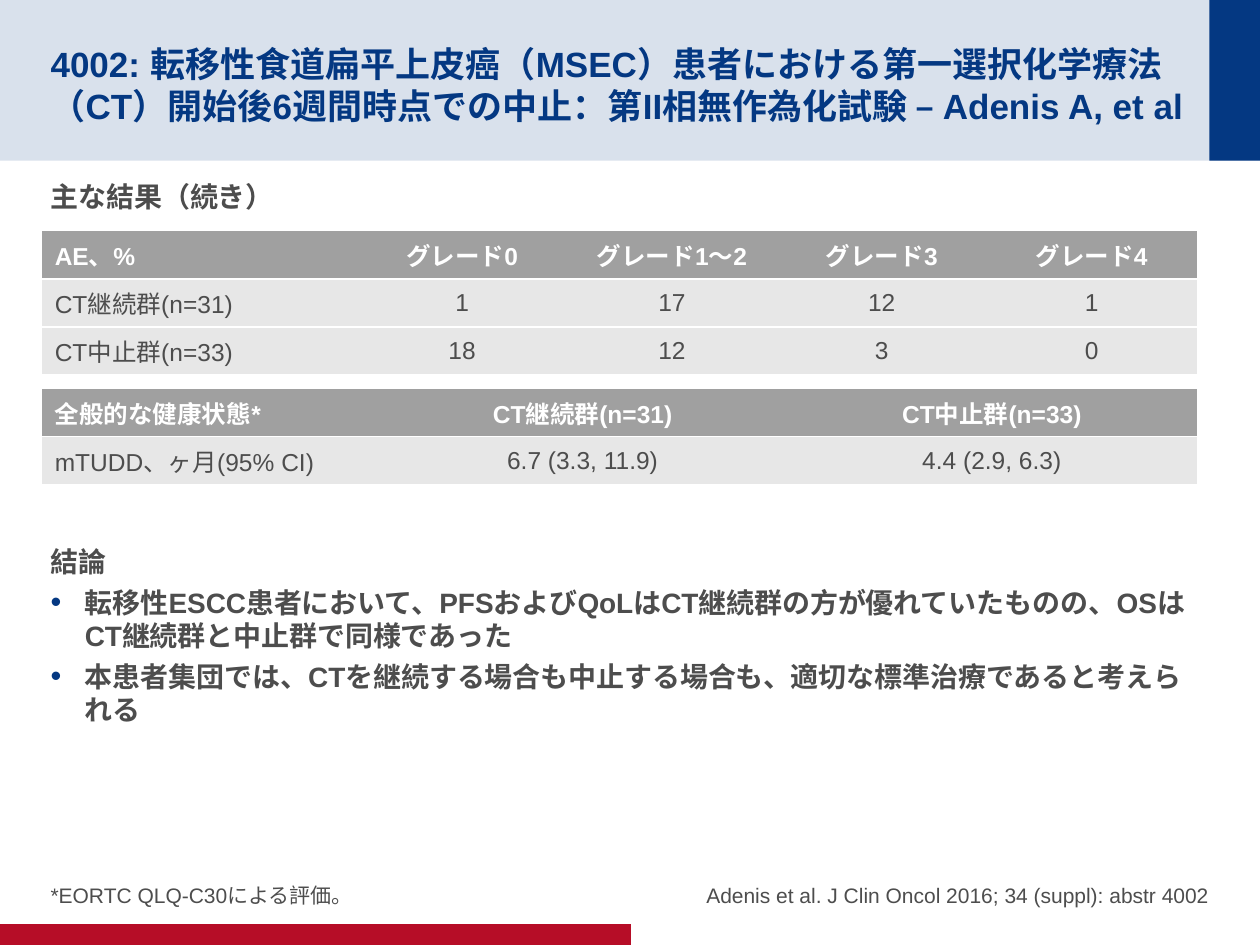
import pptx
import pptx.dml.color
import pptx.enum.shapes
import pptx.enum.text
import pptx.oxml
import pptx.oxml.ns
import pptx.util
from pptx.util import Cm

RGBColor = pptx.dml.color.RGBColor
Align = pptx.enum.text.PP_ALIGN
Anchor = pptx.enum.text.MSO_ANCHOR

NAVY = RGBColor(0x04, 0x38, 0x82)
PALE_BLUE = RGBColor(0xD9, 0xE1, 0xEC)
RED = RGBColor(0xB6, 0x0D, 0x27)
TEXT_GREY = RGBColor(0x4D, 0x4D, 0x4D)
HEADER_GREY = RGBColor(0xA0, 0xA0, 0xA0)
ROW_GREY = RGBColor(0xE7, 0xE7, 0xE7)
WHITE = RGBColor(0xFF, 0xFF, 0xFF)

NAMESPACE = pptx.oxml.ns.nsdecls("a")
NO_STYLE_TABLE = "{2D5ABB26-0587-4C30-8999-92F81FD0307C}"
LEFT = Cm(1.02)
ROW_HEIGHT = Cm(0.97)


def write(paragraph, text, size=16, color=TEXT_GREY, bold=False,
          align=Align.LEFT, before=0, after=4, bullet=False):
    """Put formatted text into a paragraph."""
    paragraph.alignment = align
    paragraph.space_before = pptx.util.Pt(before)
    paragraph.space_after = pptx.util.Pt(after)
    run = paragraph.add_run()
    run.text = text
    run.font.name = "Arial"
    run.font.size = pptx.util.Pt(size)
    run.font.bold = bold
    run.font.color.rgb = color
    if bullet:
        add_bullet(paragraph)


def add_bullet(paragraph):
    properties = paragraph._p.get_or_add_pPr()
    properties.set("marL", str(Cm(0.69)))
    properties.set("indent", str(-Cm(0.69)))
    for xml in (
        f'<a:buClr {NAMESPACE}><a:srgbClr val="{NAVY}"/></a:buClr>',
        f'<a:buSzPct {NAMESPACE} val="110000"/>',
        f'<a:buFont {NAMESPACE} typeface="Arial"/>',
        f'<a:buChar {NAMESPACE} char="•"/>',
    ):
        properties.append(pptx.oxml.parse_xml(xml))


def add_bar(slide, left, top, width, height, color):
    shape = slide.shapes.add_shape(
        pptx.enum.shapes.MSO_SHAPE.RECTANGLE, left, top, width, height)
    shape.shadow.inherit = False
    shape.fill.solid()
    shape.fill.fore_color.rgb = color
    shape.line.fill.background()


def add_text(slide, left, top, width, height, paragraphs,
             anchor=Anchor.TOP, inset_top=0, **text_format):
    """Add a text box; each paragraph is a text and its own format."""
    frame = slide.shapes.add_textbox(left, top, width, height).text_frame
    frame.word_wrap = True
    frame.vertical_anchor = anchor
    frame.margin_left = frame.margin_right = frame.margin_bottom = 0
    frame.margin_top = inset_top
    for index, (text, own_format) in enumerate(paragraphs):
        paragraph = frame.add_paragraph() if index else frame.paragraphs[0]
        write(paragraph, text, **{**text_format, **own_format})


def add_rules(cell):
    """Draw white lines above and below a cell."""
    properties = cell._tc.get_or_add_tcPr()
    for side in ("lnT", "lnB"):
        properties.append(pptx.oxml.parse_xml(
            f'<a:{side} {NAMESPACE} w="12700"><a:solidFill>'
            f'<a:srgbClr val="{WHITE}"/></a:solidFill></a:{side}>'))


def add_grid(slide, top, widths, rows):
    """Add a table with a dark header row and a left-aligned first column."""
    table = slide.shapes.add_table(
        len(rows), len(widths), Cm(0.85), top,
        sum(widths), ROW_HEIGHT * len(rows)).table
    table.horz_banding = False
    style = table._tbl.tblPr.find(pptx.oxml.ns.qn("a:tableStyleId"))
    style.text = NO_STYLE_TABLE
    for column, width in zip(table.columns, widths):
        column.width = width
    for row_index, row in enumerate(rows):
        header = row_index == 0
        table.rows[row_index].height = ROW_HEIGHT
        for column_index, text in enumerate(row):
            cell = table.cell(row_index, column_index)
            add_rules(cell)
            cell.fill.solid()
            cell.fill.fore_color.rgb = HEADER_GREY if header else ROW_GREY
            cell.vertical_anchor = Anchor.MIDDLE
            write(cell.text_frame.paragraphs[0], text, size=14, bold=header,
                  color=WHITE if header else TEXT_GREY, before=2.8, after=0,
                  align=Align.CENTER if column_index else Align.LEFT)


def main():
    presentation = pptx.Presentation()
    presentation.slide_width = Cm(25.4)
    presentation.slide_height = Cm(19.05)
    slide = presentation.slides.add_slide(presentation.slide_layouts[6])

    # Title band and footer bar
    add_bar(slide, 0, 0, Cm(25.4), Cm(3.24), PALE_BLUE)
    add_bar(slide, Cm(24.38), 0, Cm(1.02), Cm(3.24), NAVY)
    add_bar(slide, 0, Cm(18.63), Cm(12.72), Cm(0.42), RED)

    # Title
    title = ("4002: 転移性食道扁平上皮癌（MSEC）患者における第一選択化学療法（CT）"
             "開始後6週間時点での中止：第II相無作為化試験 – Adenis A, et al")
    add_text(slide, LEFT, Cm(0.51), Cm(22.89), Cm(2.24), [(title, {})],
             anchor=Anchor.MIDDLE, inset_top=Cm(0.13),
             size=20, color=NAVY, bold=True, after=0)

    # Results heading and tables
    add_text(slide, LEFT, Cm(3.48), Cm(23.37), Cm(1),
             [("主な結果（続き）", {})], inset_top=Cm(0.13), bold=True)
    add_grid(slide, Cm(4.65), [Cm(6.35)] + [Cm(4.23)] * 4, [
        ("AE、%", "グレード0", "グレード1～2", "グレード3", "グレード4"),
        ("CT継続群(n=31)", "1", "17", "12", "1"),
        ("CT中止群(n=33)", "18", "12", "3", "0"),
    ])
    add_grid(slide, Cm(7.83), [Cm(6.77), Cm(8.25), Cm(8.25)], [
        ("全般的な健康状態*", "CT継続群(n=31)", "CT中止群(n=33)"),
        ("mTUDD、ヶ月(95% CI)", "6.7 (3.3, 11.9)", "4.4 (2.9, 6.3)"),
    ])

    # Conclusions
    add_text(slide, LEFT, Cm(10.85), Cm(23.37), Cm(4), [
        ("結論", {}),
        ("転移性ESCC患者において、PFSおよびQoLはCT継続群の方が優れていたものの、"
         "OSはCT継続群と中止群で同様であった", {"bullet": True}),
        ("本患者集団では、CTを継続する場合も中止する場合も、"
         "適切な標準治療であると考えられる", {"bullet": True}),
    ], inset_top=Cm(0.13), bold=True)

    # Footnote and citation
    notes = [
        (LEFT, "*EORTC QLQ-C30による評価。", Align.LEFT),
        (Cm(12.9), "Adenis et al. J Clin Oncol 2016; 34 (suppl): abstr 4002",
         Align.RIGHT),
    ]
    for left, text, align in notes:
        add_text(slide, left, Cm(17.58), Cm(11.48), Cm(0.71), [(text, {})],
                 anchor=Anchor.BOTTOM, size=12, align=align)

    presentation.save("out.pptx")


if __name__ == "__main__":
    main()
